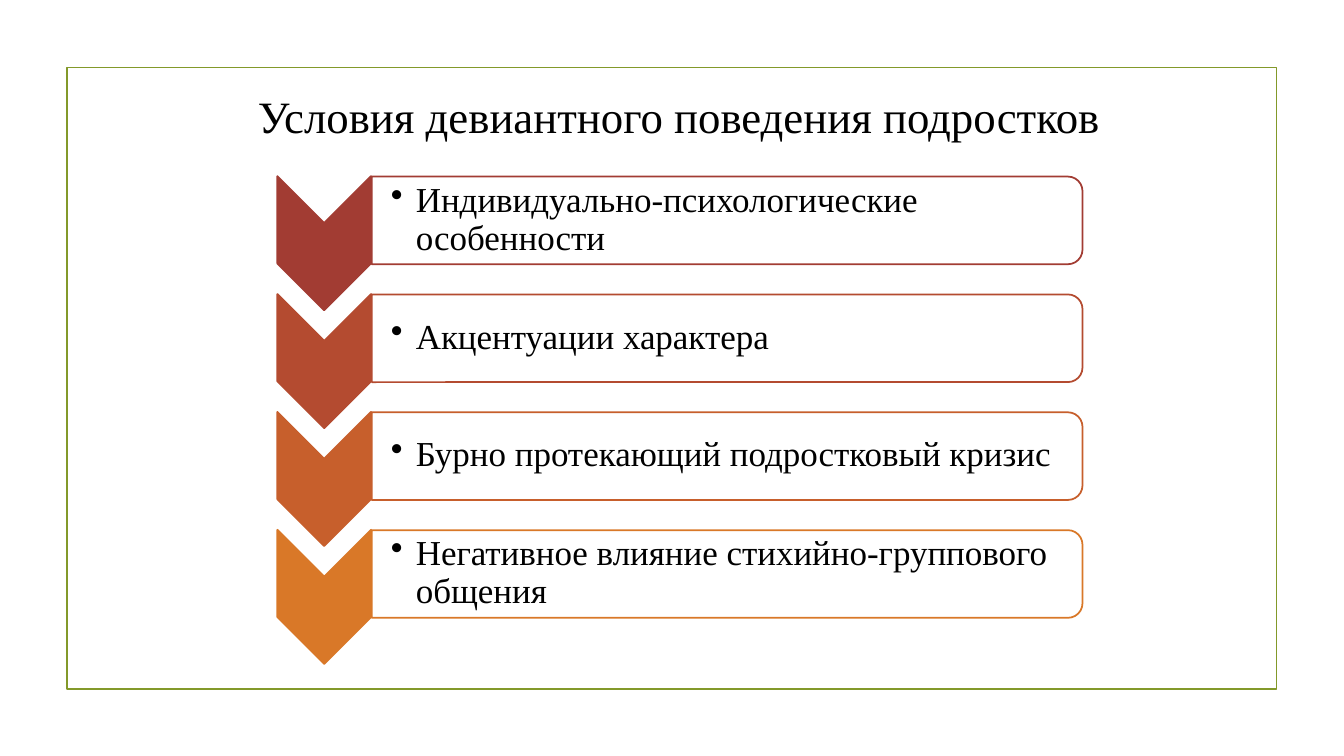
"""Builds a slide listing the conditions of deviant behaviour in adolescents."""
from lxml.etree import SubElement
from pptx import Presentation
from pptx.dml.color import RGBColor
from pptx.enum.shapes import MSO_SHAPE
from pptx.enum.text import MSO_ANCHOR, MSO_AUTO_SIZE, PP_ALIGN
from pptx.oxml.ns import qn
from pptx.util import Cm, Pt

FONT = "Times New Roman"
BLACK = RGBColor(0x00, 0x00, 0x00)
WHITE = RGBColor(0xFF, 0xFF, 0xFF)
OLIVE = RGBColor(0x83, 0x99, 0x2A)
TITLE = "Условия девиантного поведения подростков"
CONDITIONS = [
    ("Индивидуально-психологические особенности", RGBColor(0xA2, 0x3C, 0x33)),
    ("Акцентуации характера", RGBColor(0xB4, 0x4B, 0x30)),
    ("Бурно протекающий подростковый кризис", RGBColor(0xC7, 0x5F, 0x2C)),
    ("Негативное влияние стихийно-группового общения", RGBColor(0xD9, 0x78, 0x28)),
]
ROW_PITCH = 2.97


def set_font(paragraph, size):
    """Give a paragraph the slide's typeface in black."""
    paragraph.font.name = FONT
    paragraph.font.size = Pt(size)
    paragraph.font.color.rgb = BLACK


def add_outlined_shape(slide, kind, left, top, width, height, line_color, fill_color=None):
    """Add a preset shape with a thin outline and an optional solid fill."""
    shape = slide.shapes.add_shape(kind, Cm(left), Cm(top), Cm(width), Cm(height))
    shape.shadow.inherit = False
    shape.line.color.rgb = line_color
    shape.line.width = Pt(1.25)
    if fill_color is None:
        shape.fill.background()
    else:
        shape.fill.solid()
        shape.fill.fore_color.rgb = fill_color
    return shape


def set_opacity(shape, percent):
    """Make the solid fill of a shape partly transparent."""
    color = shape.fill._xPr.find(qn("a:solidFill")).find(qn("a:srgbClr"))
    SubElement(color, qn("a:alpha"), val=str(percent * 1000))


def add_bullet(paragraph, indent):
    """Give a paragraph a round bullet with a hanging indent."""
    properties = paragraph._p.get_or_add_pPr()
    properties.set("marL", str(indent))
    properties.set("indent", str(-indent))
    SubElement(properties, qn("a:buChar"), char="•")


def format_title(slide):
    """Place and fill the title placeholder."""
    title = slide.shapes.title
    title.left, title.top, title.width, title.height = Cm(4.39), Cm(2.13), Cm(25.45), Cm(1.55)
    frame = title.text_frame
    frame.text = TITLE
    frame.auto_size = MSO_AUTO_SIZE.NONE
    frame.vertical_anchor = MSO_ANCHOR.MIDDLE
    paragraph = frame.paragraphs[0]
    paragraph.alignment = PP_ALIGN.CENTER
    set_font(paragraph, 32)


def add_condition_text(slide, top, text):
    """Add one bulleted condition."""
    box = slide.shapes.add_textbox(Cm(9.37), Cm(top), Cm(17.78), Cm(1.98))
    frame = box.text_frame
    frame.word_wrap = True
    frame.vertical_anchor = MSO_ANCHOR.MIDDLE
    frame.margin_left = Cm(0.48)
    frame.margin_top = frame.margin_right = frame.margin_bottom = Cm(0.05)
    frame.text = text
    paragraph = frame.paragraphs[0]
    paragraph.line_spacing = 0.9
    add_bullet(paragraph, Cm(0.63))
    set_font(paragraph, 25)


def add_condition(slide, offset, text, color):
    """Add a row with a downward chevron, a rounded panel and its text."""
    chevron = add_outlined_shape(
        slide, MSO_SHAPE.CHEVRON, 6.48, 4.95 + offset, 3.38, 2.36, color, color)
    panel = add_outlined_shape(
        slide, MSO_SHAPE.ROUND_2_SAME_RECTANGLE, 17.22, -3.4 + offset, 2.21, 17.91, color, WHITE)
    set_opacity(panel, 90)
    chevron.rotation = panel.rotation = 90
    add_condition_text(slide, 4.55 + offset, text)


def main():
    """Build and save the presentation."""
    presentation = Presentation()
    presentation.slide_width, presentation.slide_height = Cm(33.87), Cm(19.05)
    slide = presentation.slides.add_slide(presentation.slide_layouts[5])
    add_outlined_shape(slide, MSO_SHAPE.RECTANGLE, 1.69, 1.7, 30.48, 15.67, OLIVE)
    format_title(slide)
    for row, (text, color) in enumerate(CONDITIONS):
        add_condition(slide, row * ROW_PITCH, text, color)
    presentation.save("out.pptx")


if __name__ == "__main__":
    main()
